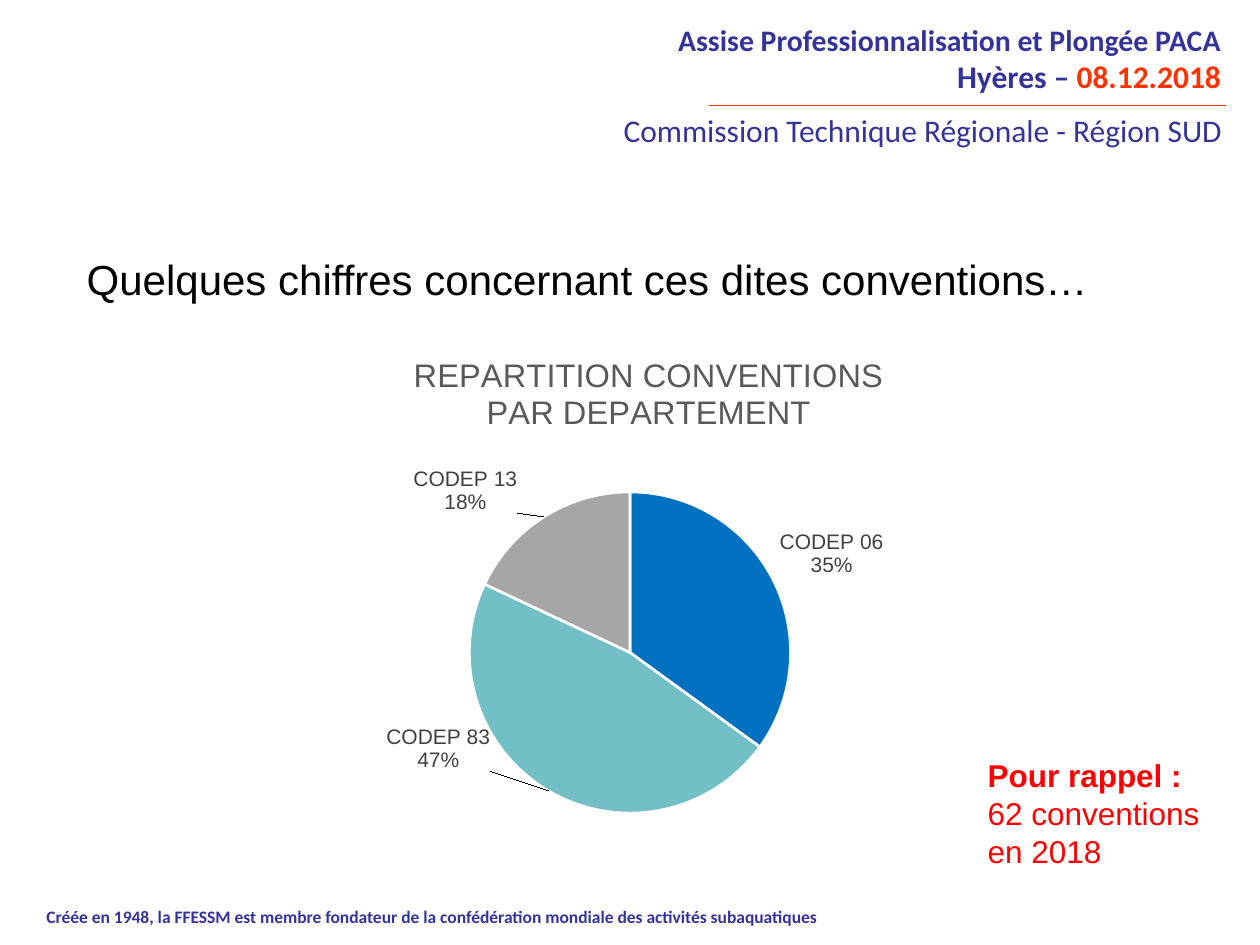
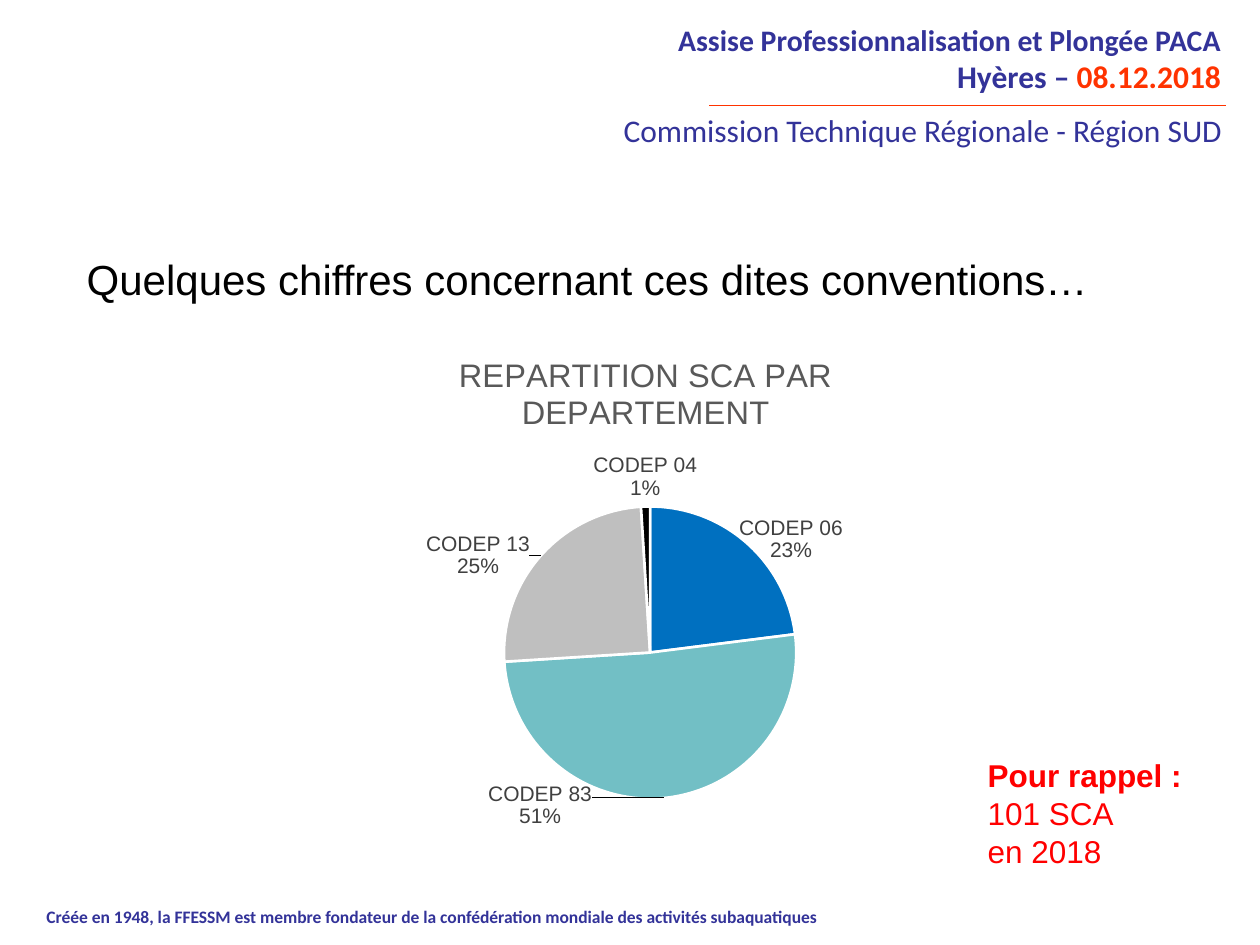
from lxml import etree
from pptx import Presentation
from pptx.chart.data import CategoryChartData
from pptx.dml.color import RGBColor
from pptx.enum.chart import XL_CHART_TYPE, XL_LABEL_POSITION
from pptx.enum.shapes import MSO_CONNECTOR
from pptx.enum.text import PP_ALIGN
from pptx.oxml.ns import qn
from pptx.util import Inches, Pt

NAVY = RGBColor(0x33, 0x33, 0x99)
ORANGE = RGBColor(0xFF, 0x33, 0x00)
RED = RGBColor(0xFF, 0x00, 0x00)
BLACK = RGBColor(0x00, 0x00, 0x00)
WHITE = RGBColor(0xFF, 0xFF, 0xFF)
TITLE_GRAY = RGBColor(0x59, 0x59, 0x59)
LABEL_GRAY = RGBColor(0x40, 0x40, 0x40)
BLUE = RGBColor(0x00, 0x70, 0xC0)
TEAL = RGBColor(0x72, 0xBF, 0xC5)
GRAY = RGBColor(0xA6, 0xA6, 0xA6)
LIGHT_GRAY = RGBColor(0xBF, 0xBF, 0xBF)

LEFT, RIGHT = PP_ALIGN.LEFT, PP_ALIGN.RIGHT
PIE = XL_CHART_TYPE.PIE
OUTSIDE_END = XL_LABEL_POSITION.OUTSIDE_END
STRAIGHT = MSO_CONNECTOR.STRAIGHT

HEADING_FONT = "Calibri"
BODY_FONT = "Arial"
CHART_TOP, CHART_HEIGHT = 2.65, 4.25
SHOWN = {"showVal": "0", "showCatName": "1", "showPercent": "1"}


def style_font(font, name, size, color, bold=False):
    font.name = name
    font.size = Pt(size)
    font.color.rgb = color
    font.bold = bold


def manual_layout(**settings):
    layout = etree.Element(qn("c:layout"))
    manual = etree.SubElement(layout, qn("c:manualLayout"))
    for name, value in settings.items():
        setting = value if isinstance(value, str) else f"{value:.4f}"
        etree.SubElement(manual, qn(f"c:{name}")).set("val", setting)
    return layout


class ConventionDeck:
    def __init__(self):
        self.deck = Presentation()
        self.deck.slide_width = Inches(10)
        self.deck.slide_height = Inches(7.5)
        self.page = None

    def add_page(self):
        self.page = self.deck.slides.add_slide(self.deck.slide_layouts[6])
        self.add_text(4.21, 0.12, 5.58, 0.71, [
            [("Assise Professionnalisation et Plongée PACA", 17, NAVY, True)],
            [("Hyères –", 18, NAVY, True), (" 08.12.2018", 18, ORANGE, True)],
        ], HEADING_FONT, RIGHT)
        self.add_rule(5.63, 9.73, 0.84)
        self.add_text(4.76, 0.83, 5.04, 0.4, [
            [("Commission Technique Régionale - Région SUD", 18, NAVY, False)],
        ], HEADING_FONT, RIGHT)
        self.add_text(0.27, 7.14, 6.56, 0.27, [
            [("Créée en 1948, la FFESSM est membre fondateur de la "
              "confédération mondiale des activités subaquatiques", 10, NAVY, True)],
        ], HEADING_FONT)
        self.add_text(0.59, 1.96, 8.74, 0.5, [
            [("Quelques chiffres concernant ces dites conventions…", 24, BLACK, False)],
        ])

    def add_text(self, left, top, width, height, lines, font=BODY_FONT, align=LEFT):
        box = self.page.shapes.add_textbox(
            Inches(left), Inches(top), Inches(width), Inches(height))
        frame = box.text_frame
        frame.word_wrap = True
        frame.text = "\n".join("" for _ in lines)
        for para, spans in zip(frame.paragraphs, lines):
            para.alignment = align
            for text, size, color, bold in spans:
                span = para.add_run()
                span.text = text
                style_font(span.font, font, size, color, bold)

    def add_rule(self, start, end, top):
        rule = self.page.shapes.add_connector(
            STRAIGHT, Inches(start), Inches(top), Inches(end), Inches(top))
        rule.line.color.rgb = ORANGE
        rule.line.width = Pt(0.75)
        etree.SubElement(rule._element.spPr, qn("a:effectLst"))

    def add_reminder(self, count):
        lines = [("Pour rappel :", True), (count, False), ("en 2018", False)]
        self.add_text(7.74, 5.95, 1.91, 1.01,
                      [[(text, 18, RED, bold)] for text, bold in lines])

    def add_pie(self, left, width, title, slices, center, diameter):
        data = CategoryChartData()
        data.categories = [name for name, *_ in slices]
        data.add_series("Series 1", [value for _, value, *_ in slices])
        chart = self.page.shapes.add_chart(
            PIE, Inches(left), Inches(CHART_TOP), Inches(width),
            Inches(CHART_HEIGHT), data).chart
        chart.has_legend = False
        style_font(chart.font, BODY_FONT, 10, BLACK)
        chart.has_title = True
        heading = chart.chart_title.text_frame
        heading.text = title
        for para in heading.paragraphs:
            style_font(para.runs[0].font, BODY_FONT, 18.6, TITLE_GRAY)

        plot = chart.plots[0]
        plot.vary_by_categories = True
        series = plot.series[0]
        labels = series.data_labels
        labels.position = OUTSIDE_END
        style_font(labels.font, BODY_FONT, 12, LABEL_GRAY)
        for index, (_, _, color, shift) in enumerate(slices):
            point = series.points[index]
            point.format.fill.solid()
            point.format.fill.fore_color.rgb = color
            point.format.line.color.rgb = WHITE
            point.format.line.width = Pt(1.5)
            label = point.data_label
            label.position = OUTSIDE_END
            style_font(label.font, BODY_FONT, 12, LABEL_GRAY)
            if shift:
                across, down = shift
                number = chart._chartSpace.xpath(f".//c:dLbl/c:idx[@val='{index}']")[0]
                number.addnext(manual_layout(x=across / width, y=down / CHART_HEIGHT))
        self.show_names_and_shares(chart)
        self.place_pie(chart, left, width, center, diameter)

    def show_names_and_shares(self, chart):
        for name, value in SHOWN.items():
            for flag in chart._chartSpace.xpath(f".//c:{name}"):
                flag.set("val", value)
        for flag in chart._chartSpace.xpath(".//c:showBubbleSize"):
            separator = etree.Element(qn("c:separator"))
            separator.text = "\n"
            flag.addnext(separator)

    def place_pie(self, chart, left, width, center, diameter):
        across, down = center
        area = chart._chartSpace.xpath(".//c:plotArea")[0]
        for layout in area.findall(qn("c:layout")):
            area.remove(layout)
        area.insert(0, manual_layout(
            layoutTarget="inner", xMode="edge", yMode="edge",
            x=(across - diameter / 2 - left) / width,
            y=(down - diameter / 2 - CHART_TOP) / CHART_HEIGHT,
            w=diameter / width, h=diameter / CHART_HEIGHT))


def main():
    show = ConventionDeck()

    show.add_page()
    show.add_pie(2.56, 5.18, "REPARTITION CONVENTIONS\nPAR DEPARTEMENT", [
        ("CODEP 06", 35, BLUE, None),
        ("CODEP 83", 47, TEAL, (-0.43, -0.56)),
        ("CODEP 13", 18, GRAY, (-0.18, 0.02)),
    ], (5.0, 5.18), 2.55)
    show.add_reminder("62 conventions")

    show.add_page()
    show.add_pie(2.4, 5.45, "REPARTITION SCA PAR\nDEPARTEMENT", [
        ("CODEP 06", 23, BLUE, (-0.1, 0.19)),
        ("CODEP 83", 51, TEAL, (-1.4, -0.18)),
        ("CODEP 13", 25, LIGHT_GRAY, (-0.04, 0.21)),
        ("CODEP 04", 1, BLACK, None),
    ], (5.16, 5.18), 2.32)
    show.add_reminder("101 SCA")

    show.deck.save("out.pptx")


if __name__ == "__main__":
    main()
